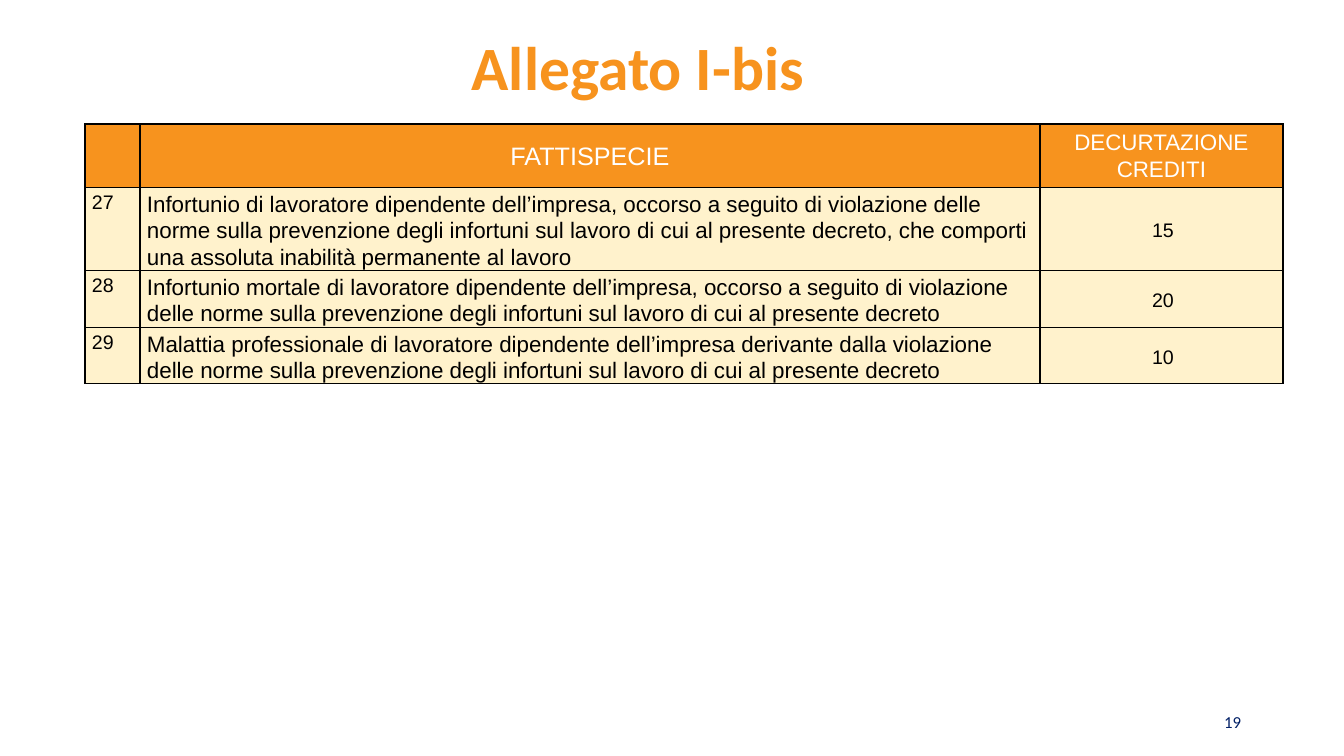
from lxml import etree
from pptx import Presentation
from pptx.dml.color import RGBColor
from pptx.enum.text import MSO_ANCHOR, PP_ALIGN
from pptx.oxml.ns import qn
from pptx.util import Pt

LEFT, CENTER, RIGHT = PP_ALIGN.LEFT, PP_ALIGN.CENTER, PP_ALIGN.RIGHT
TOP, MIDDLE, BOTTOM = MSO_ANCHOR.TOP, MSO_ANCHOR.MIDDLE, MSO_ANCHOR.BOTTOM
ORANGE = RGBColor(0xF7, 0x93, 0x1E)
CREAM = RGBColor(0xFF, 0xF2, 0xCC)
NAVY = RGBColor(0x01, 0x1F, 0x66)
WHITE = RGBColor(0xFF, 0xFF, 0xFF)
BLACK = RGBColor(0, 0, 0)


def px(value):
    """Turn pixels (100.8 to the inch) into EMU."""
    return round(value * 914400 / 100.8)


def write(paragraph, text, alignment, **font_format):
    paragraph.text = text
    paragraph.alignment = alignment
    font = paragraph.font
    font.color.rgb = font_format.pop("color")
    for name, value in font_format.items():
        setattr(font, name, value)


presentation = Presentation()
presentation.slide_width, presentation.slide_height = px(1344), px(756)
slide = presentation.slides.add_slide(presentation.slide_layouts[5])

# Title
title = slide.shapes.title
title.left, title.top, title.width, title.height = px(48), px(29), px(1180), px(74)
title.text_frame.vertical_anchor = MIDDLE
write(title.text_frame.paragraphs[0], "Allegato I-bis", CENTER,
      name="Calibri", size=Pt(44), bold=True, color=ORANGE)

# Table of violations and credits
ROWS = [
    ("", "FATTISPECIE", "DECURTAZIONE CREDITI"),
    ("27", "Infortunio di lavoratore dipendente dell’impresa, occorso a seguito di "
           "violazione delle norme sulla prevenzione degli infortuni sul lavoro di cui al "
           "presente decreto, che comporti una assoluta inabilità permanente al lavoro", "15"),
    ("28", "Infortunio mortale di lavoratore dipendente dell’impresa, occorso a seguito di "
           "violazione delle norme sulla prevenzione degli infortuni sul lavoro di cui al "
           "presente decreto", "20"),
    ("29", "Malattia professionale di lavoratore dipendente dell’impresa derivante dalla "
           "violazione delle norme sulla prevenzione degli infortuni sul lavoro di cui al "
           "presente decreto", "10"),
]
COLUMN_WIDTHS = [55, 900, 243]
ROW_HEIGHTS = [63, 83, 57, 56]
HEADER_SIZES = [18, 18, 16]
BODY_COLUMNS = [(14, LEFT, TOP), (16, LEFT, TOP), (14, CENTER, MIDDLE)]
BODY_MARGINS = {"margin_left": px(7), "margin_top": px(3),
                "margin_right": px(4), "margin_bottom": 0}

table = slide.shapes.add_table(len(ROWS), len(COLUMN_WIDTHS), px(85), px(124),
                               px(sum(COLUMN_WIDTHS)), px(sum(ROW_HEIGHTS))).table
table.first_row = table.horz_banding = False
for column, width in zip(table.columns, COLUMN_WIDTHS):
    column.width = px(width)

for row_index, (texts, height) in enumerate(zip(ROWS, ROW_HEIGHTS)):
    table.rows[row_index].height = px(height)
    is_header = row_index == 0
    for column_index, text in enumerate(texts):
        cell = table.cell(row_index, column_index)
        size, alignment, anchor = BODY_COLUMNS[column_index]
        if is_header:
            size, alignment, anchor = HEADER_SIZES[column_index], CENTER, MIDDLE
        else:
            for name, value in BODY_MARGINS.items():
                setattr(cell, name, value)
        cell.vertical_anchor = anchor
        cell.fill.solid()
        cell.fill.fore_color.rgb = ORANGE if is_header else CREAM

        paragraph = cell.text_frame.paragraphs[0]
        write(paragraph, text, alignment, name="Arial", size=Pt(size),
              color=WHITE if is_header else BLACK)
        paragraph.line_spacing = 1.07
        paragraph.space_after = Pt(2 if is_header else 8)

        properties = cell._tc.get_or_add_tcPr()
        for position, side in enumerate(("lnL", "lnR", "lnT", "lnB")):
            border = etree.Element(qn(f"a:{side}"), w=str(Pt(1)))
            fill = etree.SubElement(border, qn("a:solidFill"))
            etree.SubElement(fill, qn("a:srgbClr"), val=str(BLACK))
            properties.insert(position, border)

# Page number
page_number = slide.shapes.add_textbox(px(1131), px(697), px(120), px(40))
page_number.text_frame.word_wrap = True
page_number.text_frame.vertical_anchor = BOTTOM
write(page_number.text_frame.paragraphs[0], "19", RIGHT,
      name="Calibri", size=Pt(12), color=NAVY)

presentation.save("out.pptx")
